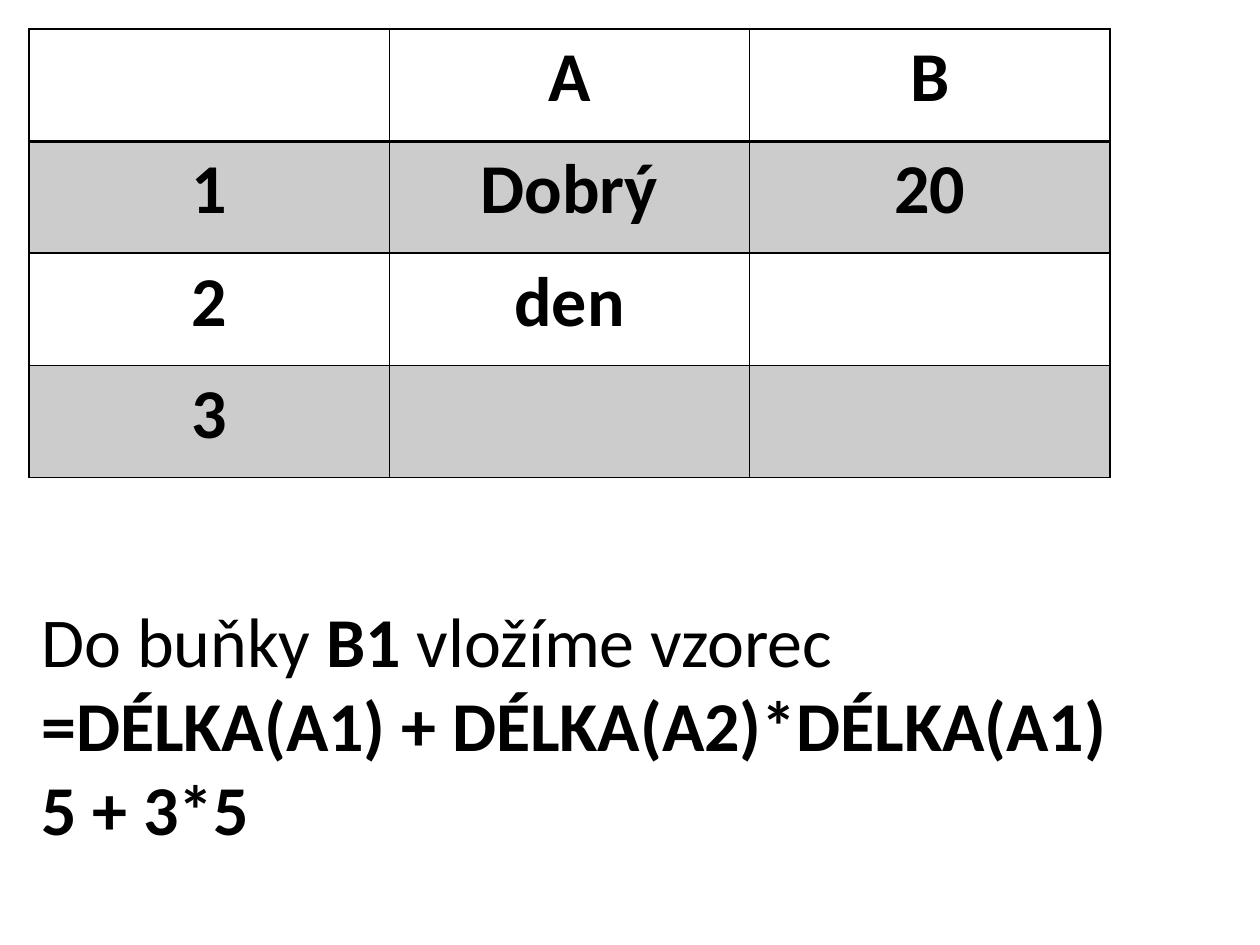
from typing import NamedTuple

from lxml import etree
from pptx import Presentation
from pptx.dml.color import RGBColor
from pptx.enum.text import MSO_AUTO_SIZE, PP_ALIGN
from pptx.oxml.ns import qn
from pptx.util import Inches, Pt

CENTER = PP_ALIGN.CENTER
GROW = MSO_AUTO_SIZE.SHAPE_TO_FIT_TEXT
COLORS = {"ink": "000000"}
FONT = {"name": "Calibri", "size": Pt(40)}
BAND_OPACITY = 20
COLUMN_WIDTH, ROW_HEIGHT = 2.86, 0.89

SHEET = [
    ["", "A", "B"],
    ["1", "Dobrý", "20"],
    ["2", "den", ""],
    ["3", "", ""],
]


class Span(NamedTuple):
    text: str
    bold: bool


EXPLANATION = [
    [
        Span("Do buňky ", False),
        Span("B1 ", True),
        Span("vložíme vzorec ", False),
        Span("=DÉLKA(A1) + DÉLKA(A2)*DÉLKA(A1)", True),
    ],
    [Span("5 + 3*5", True)],
]


def write_span(paragraph, span: Span) -> None:
    run = paragraph.add_run()
    run.text = span.text
    for attribute, value in {**FONT, "bold": span.bold}.items():
        setattr(run.font, attribute, value)
    run.font.color.rgb = RGBColor.from_string(COLORS["ink"])


def add_border(cell, side: str, width: float) -> None:
    properties = cell._tc.get_or_add_tcPr()
    border = etree.SubElement(properties, qn(f"a:ln{side}"), w=str(Pt(width)))
    fill = etree.SubElement(border, qn("a:solidFill"))
    etree.SubElement(fill, qn("a:srgbClr"), val=COLORS["ink"])


def fill_cell(cell, banded: bool) -> None:
    """Give the cell a translucent band, or no fill at all."""
    if not banded:
        cell.fill.background()
        return
    cell.fill.solid()
    cell.fill.fore_color.rgb = RGBColor.from_string(COLORS["ink"])
    color = cell._tc.tcPr.find(f"{qn('a:solidFill')}/{qn('a:srgbClr')}")
    etree.SubElement(color, qn("a:alpha"), val=str(BAND_OPACITY * 1000))


def add_sheet(slide, left: float, top: float) -> None:
    row_count, column_count = len(SHEET), len(SHEET[0])
    table = slide.shapes.add_table(
        row_count, column_count, Inches(left), Inches(top),
        Inches(column_count * COLUMN_WIDTH), Inches(row_count * ROW_HEIGHT),
    ).table
    for row_index, values in enumerate(SHEET):
        for column_index, value in enumerate(values):
            cell = table.cell(row_index, column_index)
            paragraph = cell.text_frame.paragraphs[0]
            paragraph.alignment = CENTER
            if value:
                write_span(paragraph, Span(value, True))
            widths = {
                "L": 1,
                "R": 1,
                "T": 2 if row_index == 1 else 1,
                "B": 2 if row_index == 0 else 1,
            }
            for side, width in widths.items():
                add_border(cell, side, width)
            fill_cell(cell, banded=row_index % 2 == 1)


def add_explanation(slide, left: float, top: float, width: float, height: float) -> None:
    frame = slide.shapes.add_textbox(
        Inches(left), Inches(top), Inches(width), Inches(height)
    ).text_frame
    frame.word_wrap = True
    frame.auto_size = GROW
    for index, spans in enumerate(EXPLANATION):
        paragraph = frame.add_paragraph() if index else frame.paragraphs[0]
        for span in spans:
            write_span(paragraph, span)


def main() -> None:
    presentation = Presentation()
    presentation.slide_width = Inches(10)
    presentation.slide_height = Inches(7.5)
    slide = presentation.slides.add_slide(presentation.slide_layouts[6])
    add_sheet(slide, 0.23, 0.23)
    add_explanation(slide, 0.23, 4.69, 9.06, 2.12)
    presentation.save("out.pptx")


if __name__ == "__main__":
    main()
